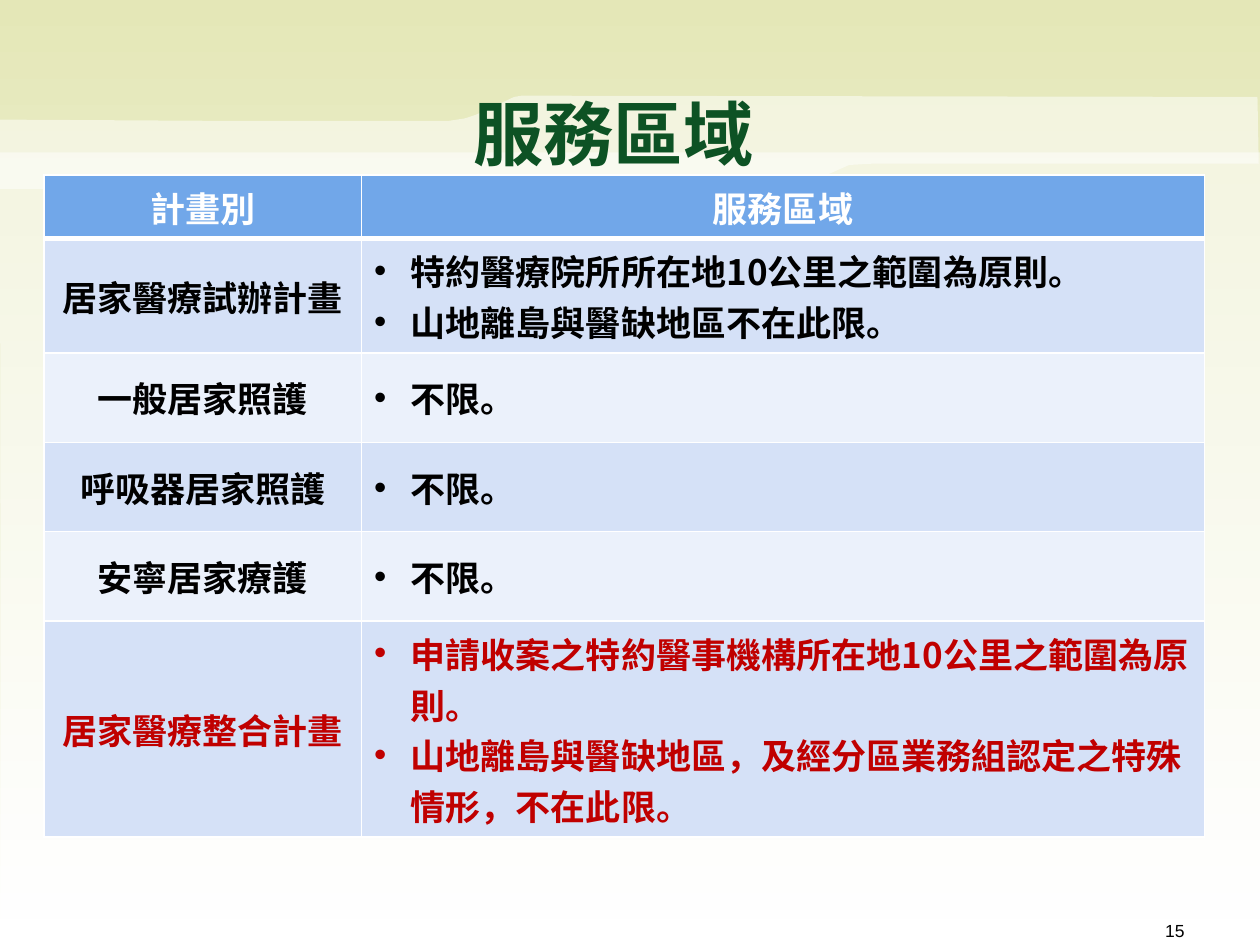
from lxml import etree
from pptx import Presentation
from pptx.dml.color import RGBColor
from pptx.enum.text import MSO_ANCHOR, PP_ALIGN
from pptx.oxml import parse_xml
from pptx.oxml.ns import nsdecls, qn
from pptx.util import Inches, Pt

CENTER, RIGHT = PP_ALIGN.CENTER, PP_ALIGN.RIGHT
MIDDLE = MSO_ANCHOR.MIDDLE
FONT = "Noto Sans CJK SC"
BLACK, WHITE, RED, GREEN = "000000", "FFFFFF", "C00000", "0D5224"


def rgb(value):
    return RGBColor.from_string(value)


def add_text(p, text, size, color, font=FONT, bold=True):
    """Add one run, with the font set for Latin and East Asian characters."""
    r = p.add_run()
    r.text = text
    r.font.size, r.font.bold, r.font.name = Pt(size), bold, font
    r.font.color.rgb = rgb(color)
    latin = r.font._element.find(qn("a:latin"))
    latin.addnext(parse_xml(f'<a:ea {nsdecls("a")} typeface="{font}"/>'))


prs = Presentation()
prs.slide_width, prs.slide_height = Inches(10), Inches(7.5)
s = prs.slides.add_slide(prs.slide_layouts[6])

# Background gradient, top to bottom
fill = s.background.fill
fill.gradient()
fill.gradient_angle = 270
for stop, color in zip(fill.gradient_stops, ("E4E7B7", WHITE)):
    stop.color.rgb = rgb(color)

# Translucent white bands, in hundredths of an inch
lower_panel = [(1, 749), (1003, 750), (1000, 121), (0, 121)]
wave_band = [(998, 77), (426, 76), (414, 76), (408, 77), (378, 91), (369, 94),
             (356, 96), (180, 96), (0, 95), (0, 150), (626, 150), (638, 147),
             (674, 131), (692, 130), (999, 130)]
for points in (lower_panel, wave_band):
    builder = s.shapes.build_freeform(*points[0], scale=Inches(0.01))
    builder.add_line_segments(points[1:], close=True)
    sp = builder.convert_to_shape()
    sp.shadow.inherit = False
    sp.line.fill.background()
    sp.fill.solid()
    sp.fill.fore_color.rgb = rgb(WHITE)
    color_el = sp._element.spPr.find(".//" + qn("a:srgbClr"))
    etree.SubElement(color_el, qn("a:alpha"), val="50000")

# Table of plans and service areas
rows = [
    ("計畫別", ["服務區域"]),
    ("居家醫療試辦計畫", ["特約醫療院所所在地10公里之範圍為原則。",
                  "山地離島與醫缺地區不在此限。"]),
    ("一般居家照護", ["不限。"]),
    ("呼吸器居家照護", ["不限。"]),
    ("安寧居家療護", ["不限。"]),
    ("居家醫療整合計畫", ["申請收案之特約醫事機構所在地10公里之範圍為原則。",
                  "山地離島與醫缺地區，及經分區業務組認定之特殊情形，不在此限。"]),
]
table = s.shapes.add_table(len(rows), 2, Inches(0.35), Inches(1.39),
                           Inches(9.21), Inches(4.9)).table
for column, width in zip(table.columns, (2.52, 6.69)):
    column.width = Inches(width)
for row, height in zip(table.rows, (0.46, 0.88, 0.71, 0.71, 0.71, 1.14)):
    row.height = Inches(height)

for i, (plan, areas) in enumerate(rows):
    header = i == 0
    color = WHITE if header else RED if i == len(rows) - 1 else BLACK
    band = "71A7E9" if header else "D5E1F7" if i % 2 else "EBF1FB"
    for j, lines in enumerate(([plan], areas)):
        cell = table.cell(i, j)
        tcPr = cell._tc.get_or_add_tcPr()
        for side in "LRTB":
            thick = (i, side) in ((0, "B"), (1, "T"))
            tcPr.append(parse_xml(
                f'<a:ln{side} {nsdecls("a")} w="{Pt(3 if thick else 1)}">'
                f'<a:solidFill><a:srgbClr val="{WHITE}"/></a:solidFill></a:ln{side}>'))
        cell.fill.solid()
        cell.fill.fore_color.rgb = rgb(band)
        if not header:
            cell.vertical_anchor = MIDDLE
        tf = cell.text_frame
        for k, line in enumerate(lines):
            p = tf.add_paragraph() if k else tf.paragraphs[0]
            if header or j == 0:
                p.alignment = CENTER
            else:
                pPr = p._p.get_or_add_pPr()
                pPr.set("marL", str(Inches(0.29)))
                pPr.set("indent", str(-Inches(0.29)))
                etree.SubElement(pPr, qn("a:buFont"), typeface="Arial")
                etree.SubElement(pPr, qn("a:buChar"), char="•")
            add_text(p, line, 20, color)

# Title
tf = s.shapes.add_textbox(Inches(3.66), Inches(0.68), Inches(2.71), Inches(0.74)).text_frame
tf.word_wrap = True
tf.vertical_anchor = MIDDLE
add_text(tf.paragraphs[0], "服務區域", 40, GREEN)

# Slide number
tf = s.shapes.add_textbox(Inches(7.17), Inches(7.25), Inches(2.33), Inches(0.18)).text_frame
tf.word_wrap = True
p = tf.paragraphs[0]
p.alignment = RIGHT
add_text(p, "15", 10, BLACK, "Arial", False)

prs.save("out.pptx")
